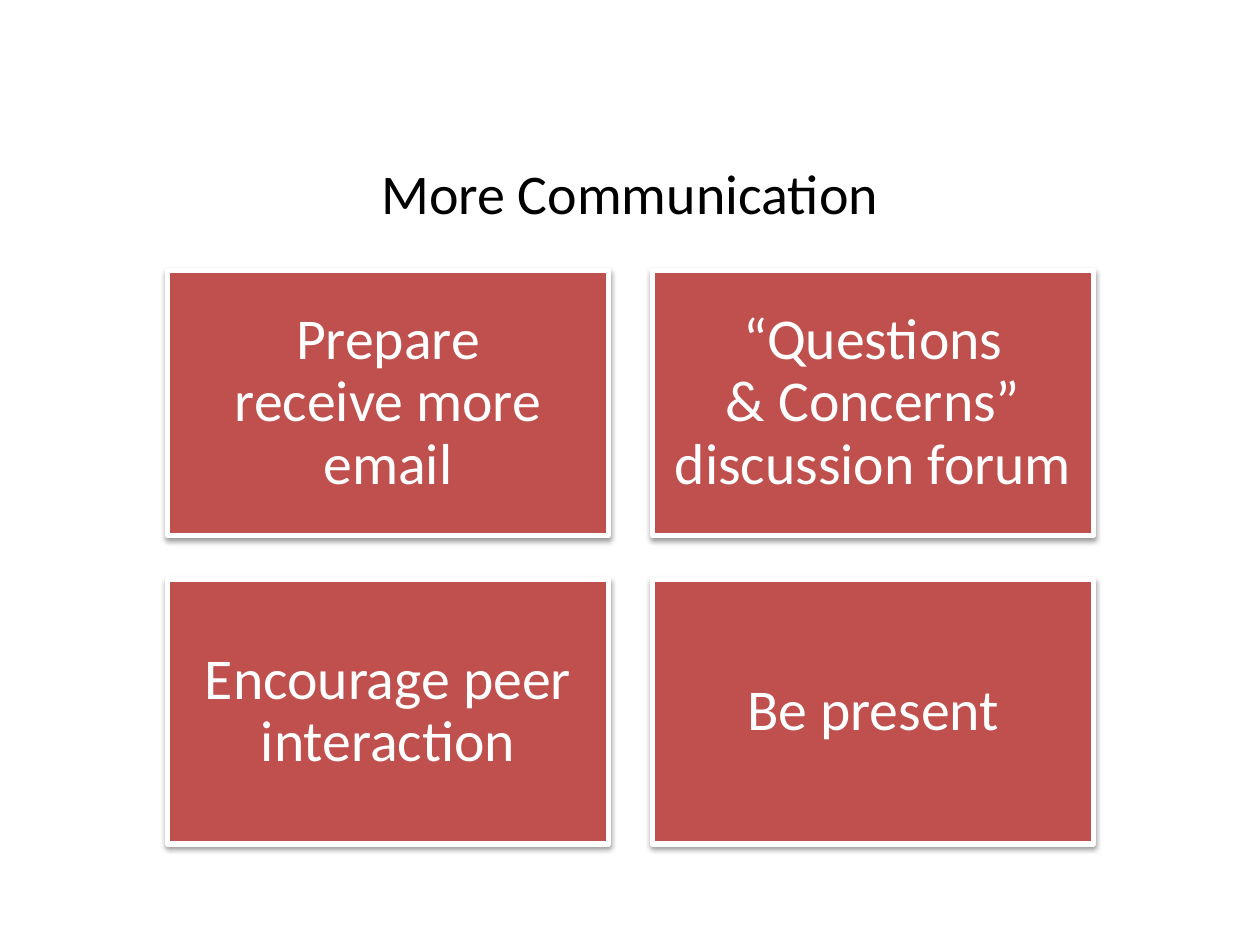
from lxml.etree import SubElement
from pptx import Presentation
from pptx.dml.color import RGBColor
from pptx.enum.shapes import MSO_SHAPE as Shape
from pptx.enum.text import MSO_ANCHOR as Anchor, PP_ALIGN as Align
from pptx.oxml.ns import qn
from pptx.util import Inches, Pt

COLORS = {"title": "000000", "card": "C0504D", "card_text": "FFFFFF",
          "border": "FFFFFF", "shadow": "000000"}
FONT = "Calibri"
HARD_SPACE = chr(160)  # keeps two words on one line
CARDS = [
    [f"Prepare receive{HARD_SPACE}more email",
     f"“Questions &{HARD_SPACE}Concerns” discussion forum"],
    ["Encourage peer interaction", "Be present"],
]
# Card grid, in inches
GRID_LEFT, GRID_TOP = 1.33, 2.15
CARD_WIDTH, CARD_HEIGHT, GAP = 3.5, 2.1, 0.35


def color(name):
    return RGBColor.from_string(COLORS[name])


def write_text(shape, text, size, color_name, margin, line_spacing=1.0):
    frame = shape.text_frame
    frame.word_wrap = True
    frame.vertical_anchor = Anchor.MIDDLE
    frame.margin_left = frame.margin_right = Inches(margin)
    frame.margin_top = frame.margin_bottom = Inches(margin)
    frame.text = text
    paragraph = frame.paragraphs[0]
    paragraph.alignment = Align.CENTER
    paragraph.line_spacing = line_spacing
    font = paragraph.runs[0].font
    font.name, font.size = FONT, Pt(size)
    font.color.rgb = color(color_name)


def add_soft_shadow(shape):
    shape.shadow.inherit = False
    effects = shape.element.spPr.find(qn("a:effectLst"))
    shadow = SubElement(effects, qn("a:outerShdw"), blurRad=str(Pt(3.1)),
                        dist=str(Pt(1.6)), dir="5400000", rotWithShape="0")
    tone = SubElement(shadow, qn("a:srgbClr"), val=COLORS["shadow"])
    SubElement(tone, qn("a:alpha"), val="38000")


def add_title(slide, text):
    title = slide.shapes.add_textbox(Inches(0.5), Inches(0.9), Inches(9), Inches(1.25))
    write_text(title, text, 32, "title", 0.05)


def add_card(slide, column, row, text):
    card = slide.shapes.add_shape(
        Shape.RECTANGLE,
        Inches(GRID_LEFT + column * (CARD_WIDTH + GAP)),
        Inches(GRID_TOP + row * (CARD_HEIGHT + GAP)),
        Inches(CARD_WIDTH), Inches(CARD_HEIGHT))
    card.fill.solid()
    card.fill.fore_color.rgb = color("card")
    card.line.color.rgb = color("border")
    card.line.width = Pt(3)
    add_soft_shadow(card)
    write_text(card, text, 33, "card_text", 0.14, 0.9)


def main():
    presentation = Presentation()
    presentation.slide_width, presentation.slide_height = Inches(10), Inches(7.5)
    slide = presentation.slides.add_slide(presentation.slide_layouts[6])

    add_title(slide, "More Communication")
    # Two-by-two grid of cards
    for row, texts in enumerate(CARDS):
        for column, text in enumerate(texts):
            add_card(slide, column, row, text)

    presentation.save("out.pptx")


if __name__ == "__main__":
    main()
